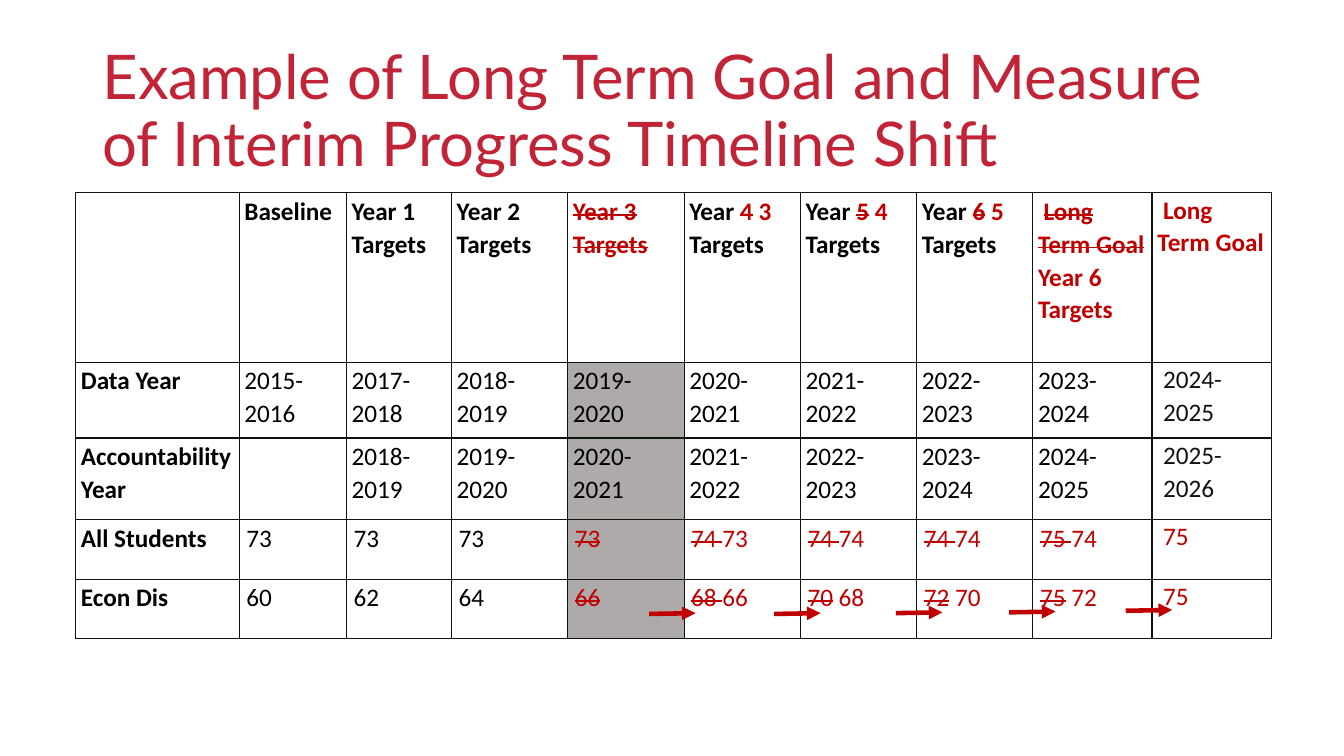
from dataclasses import dataclass

import lxml.etree
import pptx
import pptx.dml.color
import pptx.enum.shapes
import pptx.enum.text
import pptx.oxml
import pptx.oxml.ns
import pptx.table
import pptx.text.text
import pptx.util
from pptx.util import Cm


@dataclass(frozen=True)
class Theme:
    heading: str = "C12436"
    changed: str = "C00000"
    black: str = "000000"
    ink: str = "0F150D"
    skipped: str = "AEAAAA"
    title_font: str = "Lato"
    table_font: str = "Calibri"
    title_size: int = 44
    table_size: int = 18


@dataclass(frozen=True)
class Run:
    text: str
    color: str
    struck: bool = False


@dataclass(frozen=True)
class Line:
    runs: list[Run]
    indent: float = 0


@dataclass(frozen=True)
class Arrow:
    left: float
    top: float


THEME = Theme()
SKIPPED_COLUMN, GOAL_COLUMN = 4, 9
COLUMN_WIDTHS = [4.12, 2.7, 2.65, 2.93, 2.93, 2.93, 2.93, 2.93, 3, 3.01]
ROW_HEIGHTS = [4.27, 1.91, 2.06, 1.5, 1.5]
SPACE = 0.14
ARROWS = [Arrow(16.36, 15.47), Arrow(19.51, 15.47), Arrow(22.58, 15.45),
          Arrow(25.43, 15.43), Arrow(28.37, 15.39)]
ARROW_LENGTH, ARROW_RISE = 1.17, 0.02


def plain(text: str) -> Run:
    return Run(text, THEME.black)


def old(text: str) -> Run:
    return Run(text, THEME.changed, struck=True)


def new(text: str) -> Run:
    return Run(text, THEME.changed)


def rgb(color: str) -> pptx.dml.color.RGBColor:
    return pptx.dml.color.RGBColor.from_string(color)


def write(frame: pptx.text.text.TextFrame, lines: list[Line], *, font: str, size: int,
          bold: bool = False, spacing: float = 1.0, after: float = 0) -> None:
    for number, line in enumerate(lines):
        paragraph = frame.add_paragraph() if number else frame.paragraphs[0]
        paragraph.alignment = pptx.enum.text.PP_ALIGN.LEFT
        paragraph.line_spacing = spacing
        paragraph.space_before = pptx.util.Pt(0)
        paragraph.space_after = pptx.util.Pt(after)
        if line.indent:
            paragraph._p.get_or_add_pPr().set("indent", str(int(Cm(line.indent))))
        for part in line.runs:
            run = paragraph.add_run()
            run.text = part.text
            run.font.name, run.font.size, run.font.bold = font, pptx.util.Pt(size), bold
            run.font.color.rgb = rgb(part.color)
            if part.struck:
                run._r.get_or_add_rPr().set("strike", "sngStrike")


def add_borders(cell: pptx.table._Cell) -> None:
    for side in ("L", "R", "T", "B"):
        cell._tc.get_or_add_tcPr().append(pptx.oxml.parse_xml(
            f'<a:ln{side} {pptx.oxml.ns.nsdecls("a")} w="12700"><a:solidFill>'
            f'<a:srgbClr val="{THEME.ink}"/></a:solidFill></a:ln{side}>'))


def year_cells(first_years: list[int]) -> list[list[Line]]:
    *target_years, goal_year = first_years
    cells = [[Line([plain(f"{year}-{year + 1}")])] for year in target_years]
    goal = [Line([Run(text, THEME.ink)]) for text in (f"{goal_year}-", f"{goal_year + 1}")]
    return cells + [goal]


def one_line_cells(*cells: list[Run]) -> list[list[Line]]:
    return [[Line(runs)] for runs in cells]


def timeline_rows() -> list[list[list[Line]]]:
    headings = one_line_cells(
        [plain("Baseline")], [plain("Year 1 Targets")], [plain("Year 2 Targets")],
        [old("Year 3 Targets")],
        [plain("Year "), old("4"), plain(" "), new("3 "), plain("Targets")],
        [plain("Year "), old("5"), new(" 4"), plain(" Targets")],
        [plain("Year "), old("6"), new(" 5"), plain(" Targets")])
    shifted_goal = [Line([old("Long Term Goal "), new("Year 6 Targets")], SPACE)]
    final_goal = [Line([new("Long")], SPACE), Line([new("Term Goal")])]
    labels = one_line_cells([plain("Data Year")], [plain("Accountability Year")],
                            [plain("All Students")], [plain("Econ Dis")])
    target_years = list(range(2017, 2025))
    return [
        [[], *headings, shifted_goal, final_goal],
        [labels[0], *year_cells([2015, *target_years])],
        [labels[1], [], *year_cells([year + 1 for year in target_years])],
        [labels[2], *one_line_cells(
            [plain("73")], [plain("73")], [plain("73")], [old("73")],
            [old("74 "), new("73")], [old("74 "), new("74")], [old("74 "), new("74")],
            [old("75 "), new("74")], [new("75")])],
        [labels[3], *one_line_cells(
            [plain("60")], [plain("62")], [plain("64")], [old("66")],
            [old("68 "), new("66")], [old("70"), new(" 68")], [old("72"), new(" 70")],
            [old("75"), new(" 72")], [new("75")])],
    ]


def fill_cell(cell: pptx.table._Cell, lines: list[Line], row: int, column: int) -> None:
    in_goal = column == GOAL_COLUMN
    if in_goal:
        side = SPACE if row == 0 else 2 * SPACE
    else:
        side = 0.18 if row > 2 and column else 0.13
    cell.margin_left = Cm(side)
    cell.margin_right = Cm(0 if in_goal else side)
    cell.margin_top = Cm(0 if in_goal else 0.03)
    cell.margin_bottom = Cm(0)
    add_borders(cell)
    if column == SKIPPED_COLUMN and row:
        cell.fill.solid()
        cell.fill.fore_color.rgb = rgb(THEME.skipped)
    else:
        cell.fill.background()
    write(cell.text_frame, lines, font=THEME.table_font, size=THEME.table_size,
          bold=row == 0 or column == 0, spacing=1.07, after=0 if in_goal else 8)


def main() -> None:
    deck = pptx.Presentation()
    deck.slide_width, deck.slide_height = Cm(33.87), Cm(19.05)
    slide = deck.slides.add_slide(deck.slide_layouts[5])

    # Title
    title = slide.shapes.title
    title.left, title.top, title.width, title.height = Cm(2.33), Cm(1.01), Cm(29.21), Cm(3.68)
    title.text_frame.word_wrap = True
    title.text_frame.auto_size = pptx.enum.text.MSO_AUTO_SIZE.NONE
    title.text_frame.vertical_anchor = pptx.enum.text.MSO_ANCHOR.MIDDLE
    heading = "Example of Long Term Goal and Measure of Interim Progress Timeline Shift"
    write(title.text_frame, [Line([Run(heading, THEME.heading)])],
          font=THEME.title_font, size=THEME.title_size, spacing=0.9)

    # Timeline table
    rows = timeline_rows()
    timeline = slide.shapes.add_table(
        len(rows), len(COLUMN_WIDTHS), Cm(1.91), Cm(4.86),
        Cm(sum(COLUMN_WIDTHS)), Cm(sum(ROW_HEIGHTS))).table
    timeline.first_row = timeline.horz_banding = False
    for column, width in zip(timeline.columns, COLUMN_WIDTHS):
        column.width = Cm(width)
    for row, height in zip(timeline.rows, ROW_HEIGHTS):
        row.height = Cm(height)
    for row_number, cells in enumerate(rows):
        for column_number, lines in enumerate(cells):
            fill_cell(timeline.cell(row_number, column_number), lines,
                      row_number, column_number)

    # Arrows showing each target moving one year later
    for arrow in ARROWS:
        shift = slide.shapes.add_connector(
            pptx.enum.shapes.MSO_CONNECTOR.STRAIGHT, Cm(arrow.left), Cm(arrow.top),
            Cm(arrow.left + ARROW_LENGTH), Cm(arrow.top - ARROW_RISE))
        shift.line.color.rgb = rgb(THEME.changed)
        shift.line.width = pptx.util.Pt(3.25)
        lxml.etree.SubElement(shift.line._get_or_add_ln(),
                              pptx.oxml.ns.qn("a:tailEnd"), type="triangle")
        lxml.etree.SubElement(shift._element.spPr, pptx.oxml.ns.qn("a:effectLst"))

    deck.save("out.pptx")


if __name__ == "__main__":
    main()
